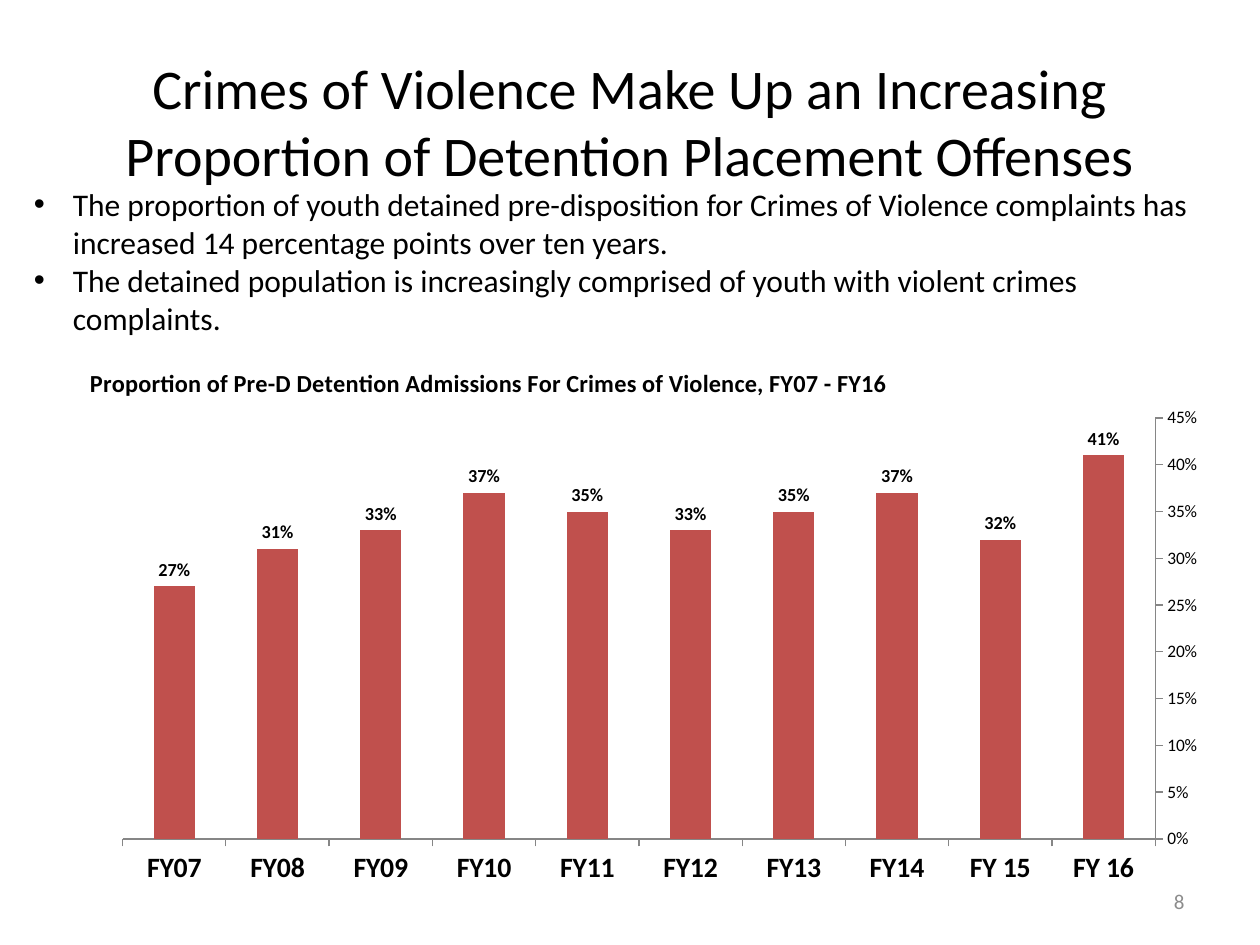
"""Build the slide on crimes of violence among detention placements."""
from lxml.etree import SubElement
from pptx import Presentation
from pptx.chart.data import CategoryChartData
from pptx.dml.color import RGBColor
from pptx.enum.chart import (XL_AXIS_CROSSES, XL_CHART_TYPE, XL_LABEL_POSITION,
                             XL_TICK_MARK)
from pptx.enum.text import MSO_ANCHOR, PP_ALIGN
from pptx.oxml import parse_xml
from pptx.oxml.ns import nsdecls, qn
from pptx.util import Inches, Pt

BLACK = RGBColor(0x00, 0x00, 0x00)
GRAY = RGBColor(0x8C, 0x8C, 0x8C)
AXIS_GRAY = RGBColor(0x86, 0x86, 0x86)
RED = RGBColor(0xC0, 0x50, 0x4D)
FONT = "Calibri"

HEADING = ("Crimes of Violence Make Up an Increasing Proportion of "
           "Detention Placement Offenses")
FINDINGS = [
    "The proportion of youth detained pre-disposition for Crimes of Violence "
    "complaints has increased 14 percentage points over ten years.",
    "The detained population is increasingly comprised of youth with violent "
    "crimes complaints.",
]
PAGE_NUMBER = "8"
CHART_HEADING = "Proportion of Pre-D Detention Admissions For Crimes of Violence, FY07 - FY16"
ADMISSIONS = [
    ("FY 16", 0.41), ("FY 15", 0.32), ("FY14", 0.37), ("FY13", 0.35),
    ("FY12", 0.33), ("FY11", 0.35), ("FY10", 0.37), ("FY09", 0.33),
    ("FY08", 0.31), ("FY07", 0.27),
]


def style(font, size, color=BLACK, bold=False):
    font.name, font.size, font.bold = FONT, Pt(size), bold
    font.color.rgb = color


def place(shape, left, top, width, height):
    shape.left, shape.top = Inches(left), Inches(top)
    shape.width, shape.height = Inches(width), Inches(height)


def write(frame, paragraphs, size, color=BLACK, align=PP_ALIGN.LEFT,
          anchor=MSO_ANCHOR.TOP, bullet_indent=None):
    frame.word_wrap = True
    frame.vertical_anchor = anchor
    for index, text in enumerate(paragraphs):
        paragraph = frame.add_paragraph() if index else frame.paragraphs[0]
        paragraph.alignment = align
        run = paragraph.add_run()
        run.text = text
        style(run.font, size, color)
        if bullet_indent:
            properties = paragraph._p.get_or_add_pPr()
            properties.set("marL", str(Inches(bullet_indent)))
            properties.set("indent", str(-Inches(bullet_indent)))
            SubElement(properties, qn("a:buFont")).set("typeface", "Arial")
            SubElement(properties, qn("a:buChar")).set("char", "•")


def set_layout(parent, target=None, **fractions):
    for old in parent.findall(qn("c:layout")):
        parent.remove(old)
    layout = parse_xml(f"<c:layout {nsdecls('c')}><c:manualLayout/></c:layout>")
    manual = layout[0]
    if target:
        SubElement(manual, qn("c:layoutTarget")).set("val", target)
    for side in "xy":
        SubElement(manual, qn(f"c:{side}Mode")).set("val", "edge")
    for key, fraction in fractions.items():
        SubElement(manual, qn(f"c:{key}")).set("val", str(fraction))
    return layout


def add_admissions_chart(slide):
    data = CategoryChartData(number_format="0%")
    data.categories = [year for year, _ in ADMISSIONS]
    data.add_series("Series 1", [share for _, share in ADMISSIONS])
    chart = slide.shapes.add_chart(
        XL_CHART_TYPE.COLUMN_CLUSTERED, Inches(0.5), Inches(2.83),
        Inches(9), Inches(4.25), data).chart
    style(chart.font, 10)
    chart.has_legend = False

    heading = chart.chart_title
    heading.text_frame.text = CHART_HEADING
    style(heading.text_frame.paragraphs[0].runs[0].font, 14, bold=True)
    heading.include_in_layout = True
    title_xml = heading._element
    layout = set_layout(title_xml, x=0.02, y=0.01)
    title_xml.find(qn("c:tx")).addnext(layout)
    plot_area = chart._chartSpace.chart.plotArea
    plot_area.insert(0, set_layout(plot_area, "inner", x=0.053, y=0.115,
                                   w=0.918, h=0.786))

    years, shares = chart.category_axis, chart.value_axis
    for axis, size, bold in ((years, 16, True), (shares, 10, False)):
        style(axis.tick_labels.font, size, bold=bold)
        axis.has_major_gridlines = False
        axis.major_tick_mark = XL_TICK_MARK.OUTSIDE
        axis.minor_tick_mark = XL_TICK_MARK.NONE
        axis.format.line.color.rgb = AXIS_GRAY
    years.reverse_order = True
    years.crosses = XL_AXIS_CROSSES.MAXIMUM
    shares.minimum_scale, shares.maximum_scale, shares.major_unit = 0, 0.45, 0.05
    shares.tick_labels.number_format = "0%"
    shares.tick_labels.number_format_is_linked = False

    plot = chart.plots[0]
    plot.gap_width = 150
    plot.vary_by_categories = False
    columns = plot.series[0]
    columns.format.fill.solid()
    columns.format.fill.fore_color.rgb = RED
    labels = columns.data_labels
    labels.show_value = True
    labels.position = XL_LABEL_POSITION.OUTSIDE_END
    labels.number_format = "0%"
    labels.number_format_is_linked = False
    style(labels.font, 10.5, bold=True)


def main():
    deck = Presentation()
    deck.slide_width, deck.slide_height = Inches(10), Inches(7.5)
    slide = deck.slides.add_slide(deck.slide_layouts[5])

    heading = slide.shapes.title
    place(heading, 0.5, 0.33, 9, 1.25)
    write(heading.text_frame, [HEADING], 32, align=PP_ALIGN.CENTER,
          anchor=MSO_ANCHOR.MIDDLE)

    page = slide.shapes.add_textbox(Inches(7.17), Inches(6.95), Inches(2.33), Inches(0.4))
    write(page.text_frame, [PAGE_NUMBER], 12, color=GRAY, align=PP_ALIGN.RIGHT,
          anchor=MSO_ANCHOR.MIDDLE)

    add_admissions_chart(slide)

    findings = slide.shapes.add_textbox(Inches(0.17), Inches(1.42), Inches(9.58), Inches(1.31))
    write(findings.text_frame, FINDINGS, 18, bullet_indent=0.31)

    deck.save("out.pptx")


if __name__ == "__main__":
    main()
